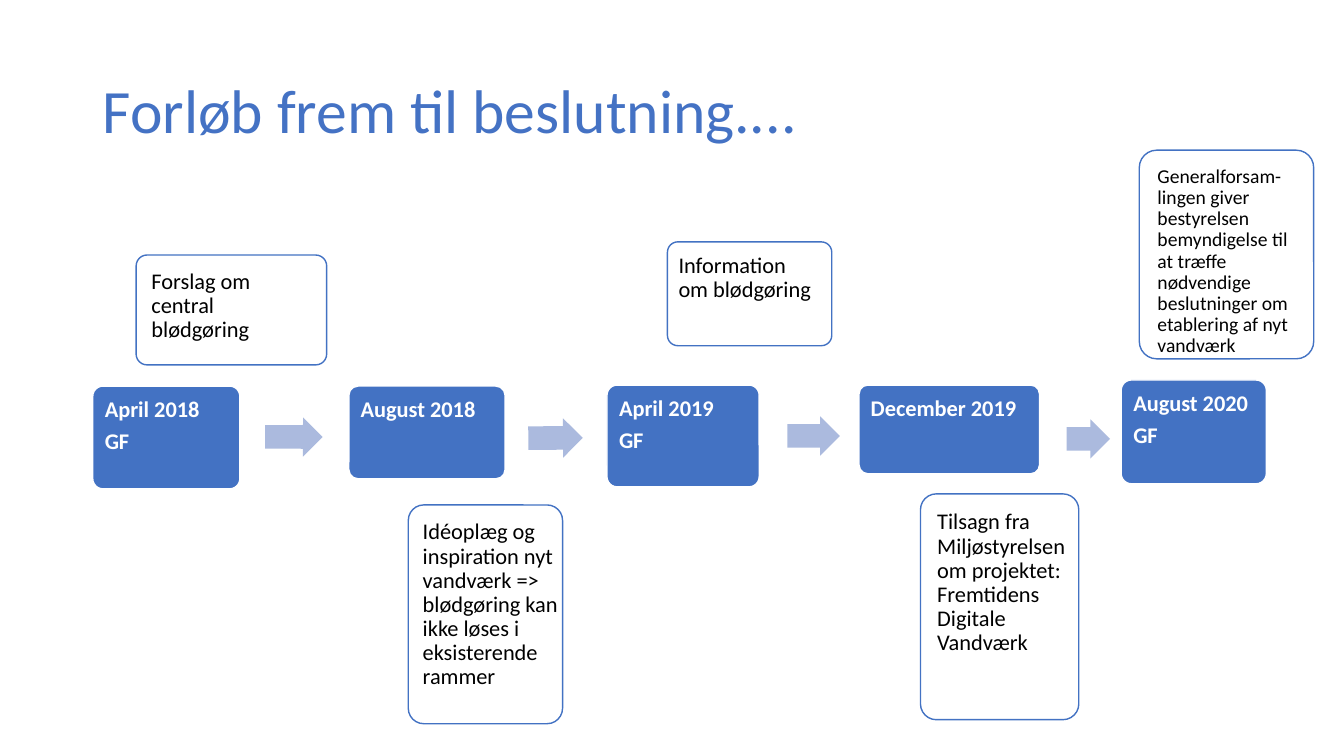
from pptx import Presentation
from pptx.dml.color import RGBColor
from pptx.enum.shapes import MSO_SHAPE
from pptx.enum.text import MSO_ANCHOR, PP_ALIGN
from pptx.util import Pt

PX = 9144
ROUNDED = MSO_SHAPE.ROUNDED_RECTANGLE
ARROW = MSO_SHAPE.RIGHT_ARROW
TOP, MIDDLE = MSO_ANCHOR.TOP, MSO_ANCHOR.MIDDLE
LEFT = PP_ALIGN.LEFT
FONT = "Calibri"
TITLE_BLUE = RGBColor(0x44, 0x72, 0xC4)
BLUE = RGBColor(0x43, 0x72, 0xC3)
PALE_BLUE = RGBColor(0xAB, 0xBA, 0xDE)
WHITE = RGBColor(0xFF, 0xFF, 0xFF)
BLACK = RGBColor(0x00, 0x00, 0x00)

MILESTONES = [
    ((92, 383, 146, 102), ["April 2018", "GF"]),
    ((346, 383, 155, 92), ["August 2018"]),
    ((602, 382, 151, 101), ["April 2019", "GF"]),
    ((852, 382, 179, 88), ["December 2019"]),
    ((1112, 377, 144, 103), ["August 2020", "GF"]),
]
NOTES = [
    ((135, 253, 189, 109), (12, 12, 13, 0), 16,
     "Forslag om central blødgøring"),
    ((405, 501, 153, 217), (10, 11, 0, 0), 16,
     "Idéoplæg og inspiration nyt vandværk => blødgøring "
     "kan ikke løses i eksisterende rammer"),
    ((662, 240, 163, 103), (8, 9, 15, 0), 16,
     "Information om blødgøring"),
    ((913, 490, 157, 224), (12, 12, 6, 0), 16,
     "Tilsagn fra Miljøstyrelsen om projektet: "
     "Fremtidens Digitale Vandværk"),
    ((1130, 149, 173, 207), (13, 11, 11, 0), 14,
     "Generalforsam- lingen giver bestyrelsen bemyndigelse til at træffe "
     "nødvendige beslutninger om etablering af nyt vandværk"),
]
ARROWS = [
    ((263, 414, 57, 39), 0.2),
    ((524, 415, 54, 39), -0.3),
    ((781, 413, 52, 39), 0),
    ((1058, 416, 43, 39), 0),
]


def px(values):
    return [v * PX for v in values]


def write(sp, lines, size, color, insets, bold=False, anchor=TOP):
    tf = sp.text_frame
    tf.word_wrap = True
    tf.vertical_anchor = anchor
    (tf.margin_left, tf.margin_top,
     tf.margin_right, tf.margin_bottom) = px(insets)
    for i, line in enumerate(lines):
        p = tf.add_paragraph() if i else tf.paragraphs[0]
        p.text = line
        p.alignment = LEFT
        p.line_spacing = 0.9
        if i:
            p.space_before = Pt(5.6)
        p.font.name = FONT
        p.font.size = Pt(size)
        p.font.bold = bold
        p.font.color.rgb = color


def add_title(s, box, text):
    sp = s.shapes.add_textbox(*px(box))
    write(sp, [text], 44, TITLE_BLUE, (10, 5, 10, 5), anchor=MIDDLE)


def add_box(s, box, fill, line):
    sp = s.shapes.add_shape(ROUNDED, *px(box))
    sp.adjustments[0] = 0.1
    sp.shadow.inherit = False
    sp.fill.solid()
    sp.fill.fore_color.rgb = fill
    sp.line.color.rgb = line
    sp.line.width = Pt(1)
    return sp


def add_milestone(s, box, lines):
    sp = add_box(s, box, BLUE, WHITE)
    write(sp, lines, 16, WHITE, (9, 9, 9, 7), bold=True)


def add_note(s, box, insets, size, text):
    sp = add_box(s, box, WHITE, BLUE)
    write(sp, [text], size, BLACK, insets)


def add_arrow(s, box, rotation):
    sp = s.shapes.add_shape(ARROW, *px(box))
    sp.adjustments[0] = 0.6
    sp.adjustments[1] = 0.5
    sp.rotation = rotation
    sp.shadow.inherit = False
    sp.fill.solid()
    sp.fill.fore_color.rgb = PALE_BLUE
    sp.line.fill.background()


def main():
    prs = Presentation()
    prs.slide_width, prs.slide_height = px((1333, 750))
    s = prs.slides.add_slide(prs.slide_layouts[6])
    add_title(s, (92, 40, 1150, 145), "Forløb frem til beslutning....")
    for milestone in MILESTONES:
        add_milestone(s, *milestone)
    for note in NOTES:
        add_note(s, *note)
    for arrow in ARROWS:
        add_arrow(s, *arrow)
    prs.save("out.pptx")


if __name__ == "__main__":
    main()
